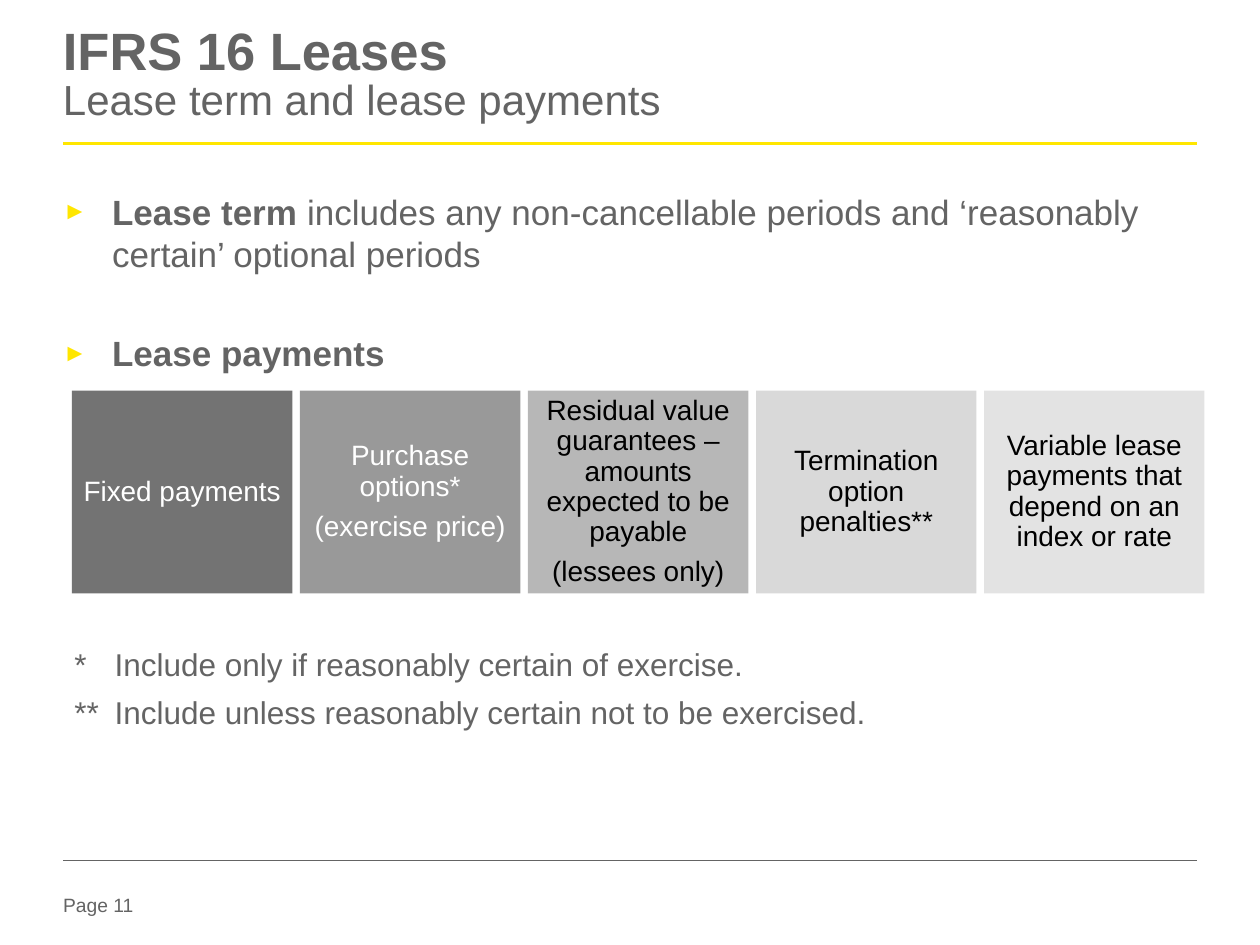
from lxml.etree import SubElement
from pptx import Presentation
from pptx.dml.color import RGBColor
from pptx.enum.shapes import MSO_CONNECTOR, MSO_SHAPE
from pptx.enum.text import MSO_ANCHOR, PP_ALIGN
from pptx.oxml.ns import qn
from pptx.util import Inches, Pt

FONT = "Arial"
GREY = RGBColor(0x64, 0x64, 0x64)
YELLOW = RGBColor(0xFF, 0xE6, 0x00)
WHITE = RGBColor(0xFF, 0xFF, 0xFF)
BLACK = RGBColor(0x00, 0x00, 0x00)

# Paragraphs, fill, opacity in percent, text colour
PAYMENTS = [
    (["Fixed payments"], GREY, 90, WHITE),
    (["Purchase options*", "(exercise price)"], RGBColor(0x80, 0x80, 0x80), 80, WHITE),
    (["Residual value guarantees – amounts expected to be payable", "(lessees only)"],
     RGBColor(0x99, 0x99, 0x99), 70, BLACK),
    (["Termination option penalties**"], RGBColor(0xC0, 0xC0, 0xC0), 60, BLACK),
    (["Variable lease payments that depend on an index or rate"],
     RGBColor(0xC8, 0xC8, 0xC8), 50, BLACK),
]
BULLETS = [
    [("Lease term ", True),
     ("includes any non-cancellable periods and ‘reasonably certain’ optional periods", False)],
    [("Lease payments", True)],
]
NOTES = [
    "*\tInclude only if reasonably certain of exercise.",
    "**\tInclude unless reasonably certain not to be exercised.",
]


def set_margins(frame, margin):
    frame.margin_left = frame.margin_right = Inches(margin)
    frame.margin_top = frame.margin_bottom = Inches(margin)
    frame.word_wrap = True


def add_text_frame(slide, left, top, width, height):
    box = slide.shapes.add_textbox(Inches(left), Inches(top), Inches(width), Inches(height))
    set_margins(box.text_frame, 0)
    return box.text_frame


def get_paragraph(frame, index):
    return frame.add_paragraph() if index else frame.paragraphs[0]


def add_run(paragraph, text, size, color=GREY, bold=False):
    run = paragraph.add_run()
    run.text = text
    run.font.name = FONT
    run.font.size = Pt(size)
    run.font.bold = bold
    run.font.color.rgb = color


def set_hanging_indent(paragraph, indent):
    properties = paragraph._p.get_or_add_pPr()
    properties.set("marL", str(Inches(indent)))
    properties.set("indent", str(-Inches(indent)))
    return properties


def add_bullet(paragraph):
    properties = set_hanging_indent(paragraph, 0.39)
    color = SubElement(properties, qn("a:buClr"))
    SubElement(color, qn("a:srgbClr"), val=str(YELLOW))
    SubElement(properties, qn("a:buSzPct"), val="70000")
    SubElement(properties, qn("a:buFont"), typeface=FONT)
    SubElement(properties, qn("a:buChar"), char="►")


def add_rule(slide, left, top, width, color, weight):
    rule = slide.shapes.add_connector(
        MSO_CONNECTOR.STRAIGHT, Inches(left), Inches(top), Inches(left + width), Inches(top))
    rule.line.color.rgb = color
    rule.line.width = Pt(weight)
    SubElement(rule._element.spPr, qn("a:effectLst"))


def add_title(slide, left, top, width, height):
    paragraph = add_text_frame(slide, left, top, width, height).paragraphs[0]
    paragraph.line_spacing = 0.85
    add_run(paragraph, "IFRS 16 Leases", 30, bold=True)
    paragraph.add_line_break()
    add_run(paragraph, "Lease term and lease payments", 24)


def add_bullets(slide, left, top, width, height):
    frame = add_text_frame(slide, left, top, width, height)
    for index, runs in enumerate(BULLETS):
        paragraph = get_paragraph(frame, index)
        add_bullet(paragraph)
        if index:
            paragraph.space_before = Pt(33)
        for text, bold in runs:
            add_run(paragraph, text, 20, bold=bold)


def add_payment_row(slide, left, top, width, height, gap=0.06):
    box_width = (width - gap * (len(PAYMENTS) - 1)) / len(PAYMENTS)
    for column, (texts, fill, opacity, color) in enumerate(PAYMENTS):
        box = slide.shapes.add_shape(
            MSO_SHAPE.RECTANGLE, Inches(left + column * (box_width + gap)), Inches(top),
            Inches(box_width), Inches(height))
        box.shadow.inherit = False
        box.line.fill.background()
        box.fill.solid()
        box.fill.fore_color.rgb = fill
        fill_color = box._element.spPr.find(qn("a:solidFill"))[0]
        SubElement(fill_color, qn("a:alpha"), val=str(opacity * 1000))
        frame = box.text_frame
        set_margins(frame, 0.07)
        frame.vertical_anchor = MSO_ANCHOR.MIDDLE
        for index, text in enumerate(texts):
            paragraph = get_paragraph(frame, index)
            paragraph.alignment = PP_ALIGN.CENTER
            paragraph.line_spacing = 0.9
            paragraph.space_after = Pt(5.6)
            add_run(paragraph, text, 16, color)


def add_notes(slide, left, top, width, height):
    frame = add_text_frame(slide, left, top, width, height)
    for index, text in enumerate(NOTES):
        paragraph = get_paragraph(frame, index)
        set_hanging_indent(paragraph, 0.32)
        paragraph.space_after = Pt(6)
        add_run(paragraph, text, 18)


def add_page_number(slide, left, top, width, height):
    add_run(add_text_frame(slide, left, top, width, height).paragraphs[0], "Page 11", 11)


def main():
    presentation = Presentation()
    presentation.slide_width = Inches(10)
    presentation.slide_height = Inches(7.5)
    slide = presentation.slides.add_slide(presentation.slide_layouts[6])
    add_page_number(slide, 0.5, 7.09, 0.79, 0.22)
    add_rule(slide, 0.5, 1.14, 9, YELLOW, 1.5)
    add_rule(slide, 0.5, 6.83, 9, GREY, 0.25)
    add_bullets(slide, 0.5, 1.51, 9, 1.86)
    add_title(slide, 0.5, 0.22, 9.26, 0.94)
    add_payment_row(slide, 0.57, 3.1, 8.99, 1.61)
    add_notes(slide, 0.59, 5.12, 9, 0.71)
    presentation.save("out.pptx")


if __name__ == "__main__":
    main()
